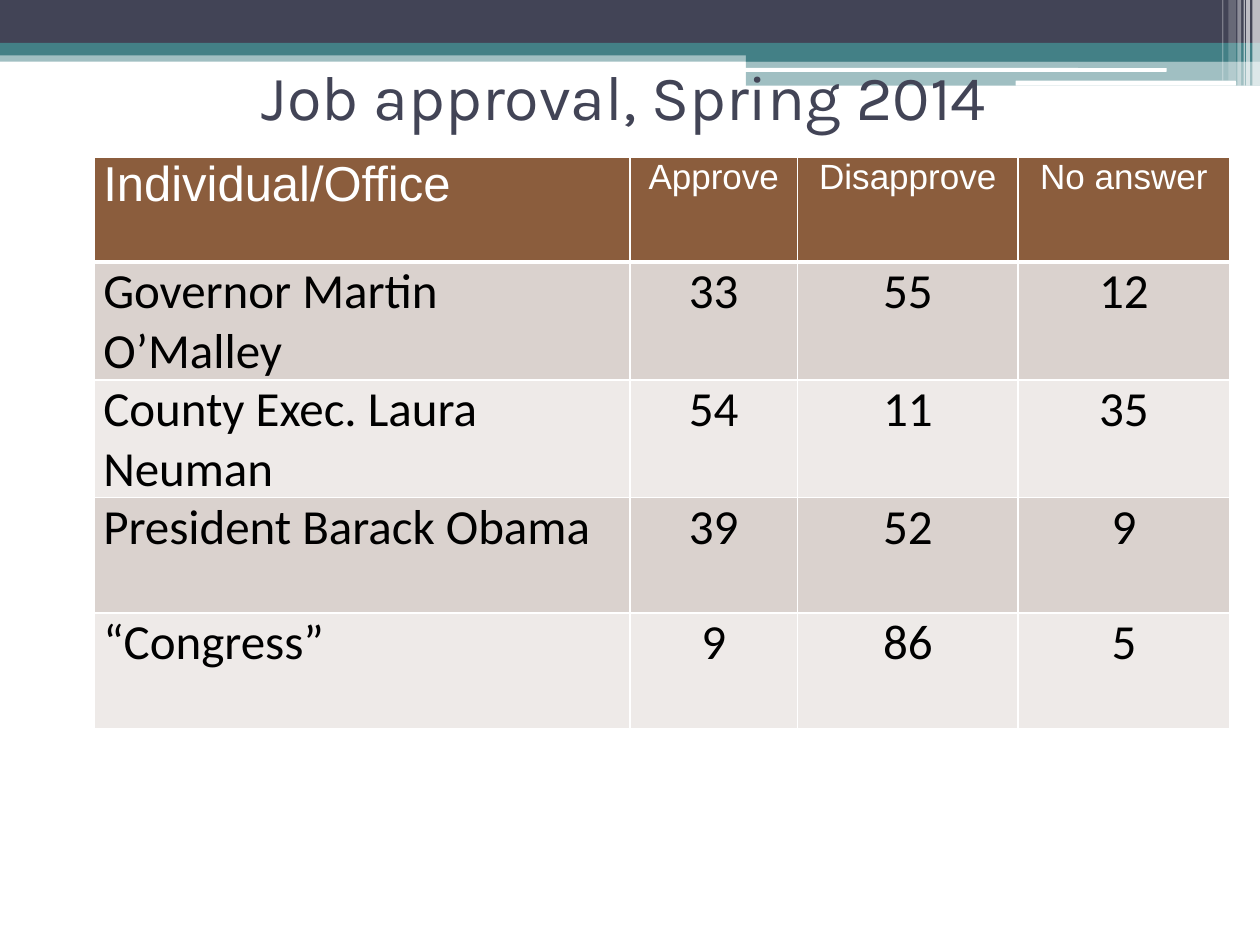
from lxml.etree import SubElement
from pptx import Presentation
from pptx.dml.color import RGBColor
from pptx.enum.shapes import MSO_SHAPE
from pptx.enum.text import MSO_ANCHOR, PP_ALIGN
from pptx.oxml.ns import qn
from pptx.util import Inches, Pt

COLUMNS, ROWS = 100, 75
NAVY, TEAL, WHITE, BLACK = "424456", "438086", "FFFFFF", "000000"
BROWN, BANDS = "8B5D3D", ("DAD2CE", "EEEAE8")


def rgb(color):
    return RGBColor.from_string(color)


class SlideBuilder:
    """Draws on one slide; places are in columns and rows of its grid."""

    def __init__(self, deck):
        self.column = deck.slide_width / COLUMNS
        self.row = deck.slide_height / ROWS
        self.slide = deck.slides.add_slide(deck.slide_layouts[6])

    def place(self, left, top, width, height):
        return (round(left * self.column), round(top * self.row),
                round(width * self.column), round(height * self.row))

    def bar(self, place, color, opacity=100, rounded=False):
        kind = MSO_SHAPE.ROUNDED_RECTANGLE if rounded else MSO_SHAPE.RECTANGLE
        bar = self.slide.shapes.add_shape(kind, *self.place(*place))
        bar.shadow.inherit = False
        bar.line.fill.background()
        bar.fill.solid()
        bar.fill.fore_color.rgb = rgb(color)
        if opacity < 100:
            tint = bar._element.spPr.find(f".//{qn('a:srgbClr')}")
            SubElement(tint, qn("a:alpha"), val=str(opacity * 1000))

    def add_text(self, frame, text, font, size, color, align):
        paragraph = frame.paragraphs[0]
        paragraph.alignment = align
        run = paragraph.add_run()
        run.text = text
        run.font.name, run.font.size, run.font.bold = font, Pt(size), False
        run.font.color.rgb = rgb(color)

    def title(self, place, text):
        frame = self.slide.shapes.add_textbox(*self.place(*place)).text_frame
        frame.word_wrap = True
        frame.vertical_anchor = MSO_ANCHOR.MIDDLE
        self.add_text(frame, text, "Karla", 36, NAVY, PP_ALIGN.CENTER)

    def borders(self, cell, **widths):
        """Give white borders, in points, by side: L, R, T, B."""
        properties = cell._tc.get_or_add_tcPr()
        for side, width in widths.items():
            line = SubElement(properties, qn(f"a:ln{side}"), w=str(Pt(width)))
            fill = SubElement(line, qn("a:solidFill"))
            SubElement(fill, qn("a:srgbClr"), val=WHITE)

    def cell(self, cell, text, fill, font, size, color, align, bottom):
        cell.margin_left = cell.margin_right = Inches(0.07)
        cell.margin_top = cell.margin_bottom = 0
        self.borders(cell, L=1, R=1, T=1, B=bottom)
        cell.fill.solid()
        cell.fill.fore_color.rgb = rgb(fill)
        self.add_text(cell.text_frame, text, font, size, color, align)

    def table(self, left, top, widths, heights, records):
        place = self.place(left, top, sum(widths), sum(heights))
        table = self.slide.shapes.add_table(
            len(heights), len(widths), *place).table
        table.horz_banding = False
        for column, width in zip(table.columns, widths):
            column.width = round(width * self.column)
        for row, height in zip(table.rows, heights):
            row.height = round(height * self.row)
        for r, record in enumerate(records):
            for c, text in enumerate(record):
                align = PP_ALIGN.CENTER if c else PP_ALIGN.LEFT
                if r == 0:
                    look = (BROWN, "Arial", 20 if c else 28, WHITE, align, 3)
                else:
                    look = (BANDS[(r - 1) % 2], "Calibri", 28, BLACK, align, 1)
                self.cell(table.cell(r, c), text, *look)


HEADER_BANDS = [
    ((0, 4, 100, 0.9), TEAL, 50),
    ((0, 0, 100, 3.4), NAVY, 100),
    ((0, 3.4, 100, 1), TEAL, 100),
    ((59.2, 3.9, 40.8, 1), TEAL, 100),
    ((59.2, 4.8, 40.8, 2), TEAL, 50),
]
HIGHLIGHTS = [(59.1, 5.4, 33.5, 0.3), (80.6, 6.4, 17.5, 0.4)]
# left, width, height, opacity
STRIPES = [
    (99.4, 0.6, 6.8, 65), (98.9, 0.3, 6.8, 65), (98.7, 0.1, 6.8, 60),
    (98.2, 0.3, 6.8, 40), (97.5, 0.6, 6.4, 20), (97, 0.1, 6.4, 30),
]
APPROVAL = [
    ("Individual/Office", "Approve", "Disapprove", "No answer"),
    ("Governor Martin O’Malley", "33", "55", "12"),
    ("County Exec. Laura Neuman", "54", "11", "35"),
    ("President Barack Obama", "39", "52", "9"),
    ("“Congress”", "9", "86", "5"),
]


def main():
    deck = Presentation()
    deck.slide_width, deck.slide_height = Inches(10), Inches(7.5)
    builder = SlideBuilder(deck)
    for place, color, opacity in HEADER_BANDS:
        builder.bar(place, color, opacity)
    for place in HIGHLIGHTS:
        builder.bar(place, WHITE, rounded=True)
    for left, width, height, opacity in STRIPES:
        builder.bar((left, 0, width, height), WHITE, opacity)
    builder.title((5.8, 4.2, 87.5, 6.7), "Job approval, Spring 2014")
    builder.table(7.5, 12.5, (42.5, 13.3, 17.5, 16.8),
                  (8.3,) + (9.17,) * 4, APPROVAL)
    deck.save("out.pptx")


if __name__ == "__main__":
    main()
